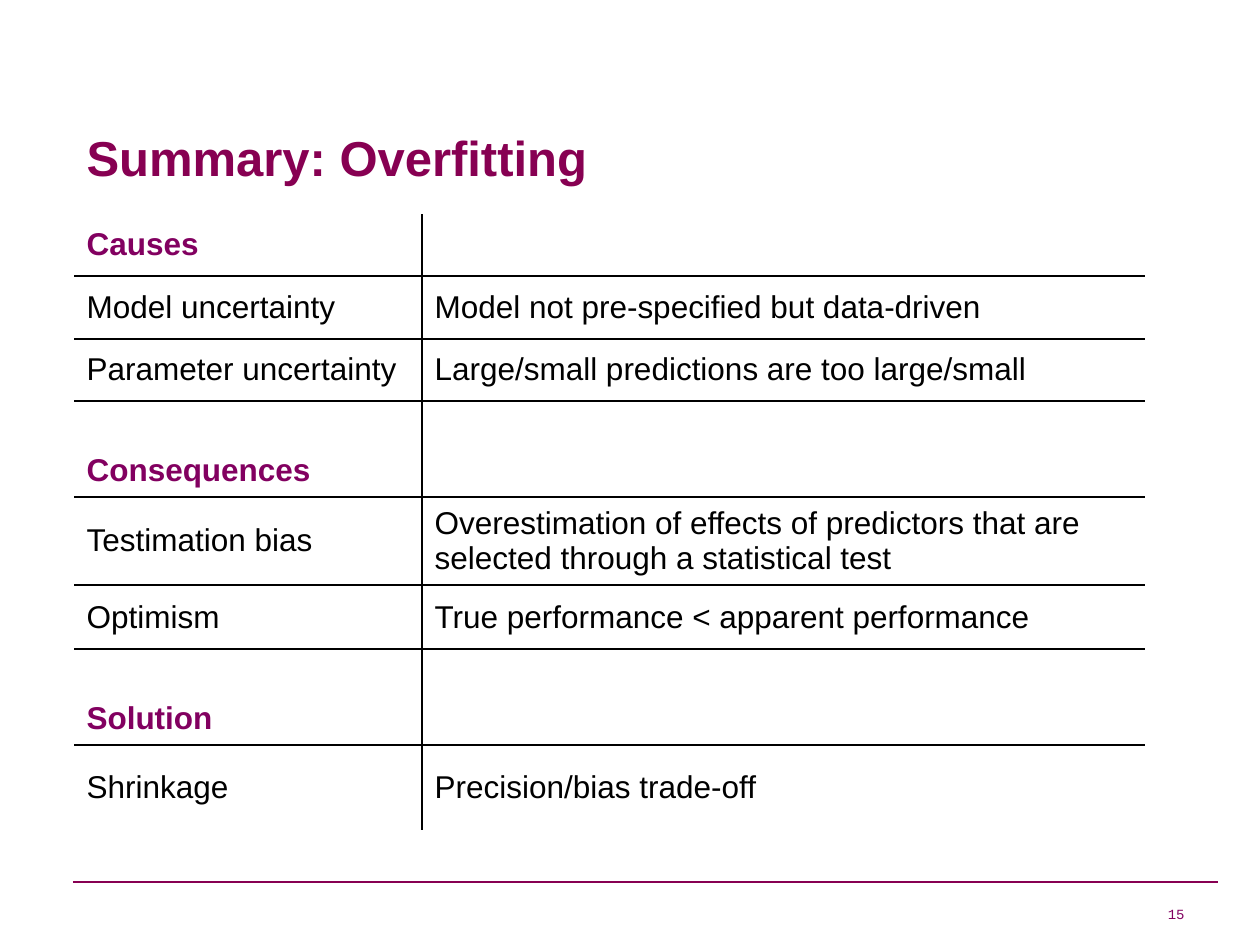
"""Build the overfitting summary slide."""
from lxml.etree import SubElement
from pptx import Presentation
from pptx.dml.color import RGBColor
from pptx.enum.shapes import MSO_CONNECTOR
from pptx.enum.text import MSO_ANCHOR, MSO_AUTO_SIZE, PP_ALIGN
from pptx.oxml.ns import qn
from pptx.util import Emu, Pt

COLORS = {"title": "870052", "accent": "820060", "text": "000000"}
ROWS = [
    (62, "Causes", ""),
    (63, "Model uncertainty", "Model not pre-specified but data-driven"),
    (62, "Parameter uncertainty", "Large/small predictions are too large/small"),
    (96, "Consequences", ""),
    (88, "Testimation bias",
     "Overestimation of effects of predictors that are selected through a statistical test"),
    (64, "Optimism", "True performance < apparent performance"),
    (96, "Solution", ""),
    (85, "Shrinkage", "Precision/bias trade-off"),
]


def px(n):
    return Emu(round(n * 914400 / 126))


class SlideBuilder:
    def __init__(self, prs, font="Arial"):
        self.font = font
        self.slide = prs.slides.add_slide(prs.slide_layouts[5])

    def run(self, p, text, size, color, bold=False, font=None):
        r = p.add_run()
        r.text = text
        r.font.name = font or self.font
        r.font.size = Pt(size)
        r.font.bold = bold
        r.font.color.rgb = RGBColor.from_string(COLORS[color])

    def title(self, x, y, w, h, text):
        s = self.slide.shapes.title
        s.left, s.top, s.width, s.height = px(x), px(y), px(w), px(h)
        tf = s.text_frame
        tf.auto_size = MSO_AUTO_SIZE.NONE
        tf.word_wrap = True
        tf.vertical_anchor = MSO_ANCHOR.TOP
        tf.margin_top = px(12)
        p = tf.paragraphs[0]
        p.alignment = PP_ALIGN.LEFT
        self.run(p, text, 28, "title", bold=True)

    def number(self, x, y, w, h, text):
        tf = self.slide.shapes.add_textbox(px(x), px(y), px(w), px(h)).text_frame
        tf.word_wrap = True
        tf.vertical_anchor = MSO_ANCHOR.MIDDLE
        p = tf.paragraphs[0]
        p.alignment = PP_ALIGN.RIGHT
        self.run(p, text, 8, "accent", font="Courier New")

    def rule(self, x1, x2, y):
        s = self.slide.shapes.add_connector(
            MSO_CONNECTOR.STRAIGHT, px(x1), px(y), px(x2), px(y))
        s.line.color.rgb = RGBColor.from_string(COLORS["title"])
        s.line.width = Pt(0.75)
        SubElement(s._element.spPr, qn("a:effectLst"))

    def borders(self, cell, visible):
        tc_pr = cell._tc.get_or_add_tcPr()
        for side in "LRTB":
            ln = SubElement(tc_pr, qn(f"a:ln{side}"), w=str(Pt(1)))
            if side in visible:
                fill = SubElement(ln, qn("a:solidFill"))
                SubElement(fill, qn("a:srgbClr"), val=COLORS["text"])
            else:
                SubElement(ln, qn("a:noFill"))

    def table(self, x, y, widths, rows):
        height = sum(row[0] for row in rows)
        table = self.slide.shapes.add_table(
            len(rows), len(widths), px(x), px(y), px(sum(widths)), px(height)).table
        table.first_row = table.horz_banding = False
        for column, width in zip(table.columns, widths):
            column.width = px(width)
        for i, (row_height, *texts) in enumerate(rows):
            table.rows[i].height = px(row_height)
            heading = not texts[1]
            for j, text in enumerate(texts):
                cell = table.cell(i, j)
                self.borders(cell, ("L" if j else "R")
                             + ("T" if i else "") + ("B" if i < len(rows) - 1 else ""))
                cell.fill.background()
                cell.vertical_anchor = MSO_ANCHOR.MIDDLE
                if heading and i:
                    cell.vertical_anchor = MSO_ANCHOR.BOTTOM
                    cell.margin_bottom = px(9)
                if text:
                    self.run(cell.text_frame.paragraphs[0], text, 18,
                             "accent" if heading else "text", bold=heading)


def main():
    prs = Presentation()
    prs.slide_width, prs.slide_height = px(1260), px(945)
    s = SlideBuilder(prs)
    s.rule(73, 1218, 882)
    s.number(903, 900, 294, 28, "15")
    s.title(74, 115, 1071, 158, "Summary: Overfitting")
    s.table(74, 214, [348, 723], ROWS)
    prs.save("out.pptx")


if __name__ == "__main__":
    main()
